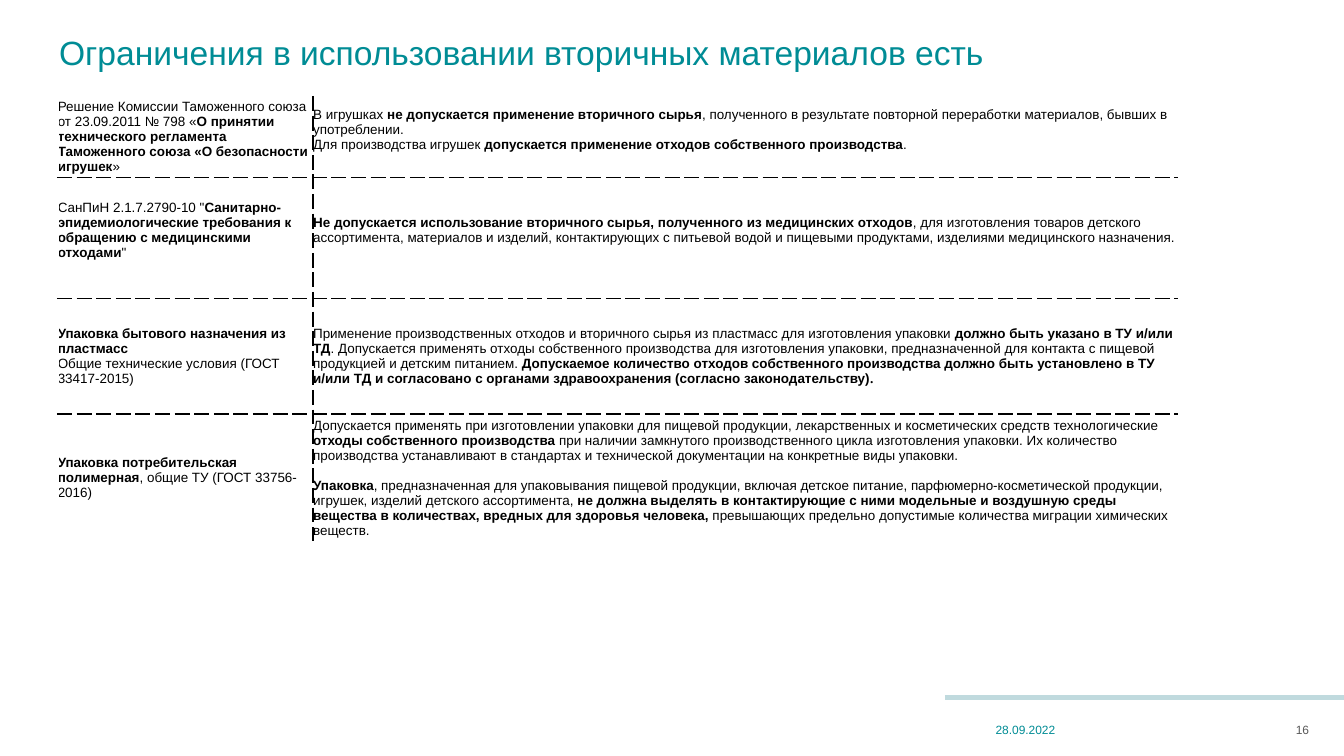
from dataclasses import dataclass

from lxml import etree
from pptx import Presentation
from pptx.dml.color import RGBColor
from pptx.enum.shapes import MSO_CONNECTOR
from pptx.enum.text import MSO_ANCHOR, PP_ALIGN
from pptx.oxml.ns import qn
from pptx.util import Inches, Pt

STRAIGHT = MSO_CONNECTOR.STRAIGHT
TOP, MIDDLE, BOTTOM = MSO_ANCHOR.TOP, MSO_ANCHOR.MIDDLE, MSO_ANCHOR.BOTTOM
LEFT, RIGHT = PP_ALIGN.LEFT, PP_ALIGN.RIGHT
GRID_COLS = 1000
UNIT = Inches(0.01)


@dataclass(frozen=True)
class Theme:
    font: str = "Arial"
    serif: str = "Times New Roman"
    teal: str = "008C95"
    gray: str = "595959"
    black: str = "000000"
    white: str = "FFFFFF"
    rule: str = "C0DADE"
    title: float = 18
    body: float = 7.2
    footer: float = 6.4
    rule_width: float = 2.75
    border_width: float = 1
    line_gap: float = 8.1


@dataclass(frozen=True)
class Box:
    col: int
    row: int
    cols: int
    rows: int

    def emu(self) -> tuple[int, int, int, int]:
        return self.col * UNIT, self.row * UNIT, self.cols * UNIT, self.rows * UNIT


@dataclass(frozen=True)
class Run:
    text: str
    bold: bool = False
    font: str = Theme.font


@dataclass(frozen=True)
class Para:
    runs: tuple[Run, ...]
    before: float = 0


@dataclass(frozen=True)
class Entry:
    paras: tuple[Para, ...]
    bottom: int = 0


T = Theme()


def para(markup: str, before: float = 0) -> Para:
    parts = enumerate(markup.split("**"))
    return Para(tuple(Run(t, i % 2 == 1) for i, t in parts if t), before)


def entry(*markups: str, bottom: int = 0) -> Entry:
    return Entry(tuple(para(m) for m in markups), bottom)


def write(tf, paras: tuple[Para, ...], *, size: float, color: str, align=LEFT) -> None:
    for i, item in enumerate(paras):
        p = tf.add_paragraph() if i else tf.paragraphs[0]
        p.alignment = align
        p.space_before = Pt(item.before)
        for run in item.runs:
            r = p.add_run()
            r.text = run.text
            r.font.name = run.font
            r.font.size = Pt(size)
            r.font.bold = run.bold
            r.font.color.rgb = RGBColor.from_string(color)
        etree.SubElement(p._p, qn("a:endParaRPr"), sz=str(round(size * 100)))


def add_text(s, box: Box, text: str, *, size: float, color: str, align=LEFT, anchor=TOP) -> None:
    tf = s.shapes.add_textbox(*box.emu()).text_frame
    tf.word_wrap = True
    tf.vertical_anchor = anchor
    tf.margin_left = tf.margin_top = tf.margin_right = tf.margin_bottom = 0
    write(tf, (para(text),), size=size, color=color, align=align)


def add_rule(s, col: int, row: int, end: int) -> None:
    line = s.shapes.add_connector(STRAIGHT, col * UNIT, row * UNIT, end * UNIT, row * UNIT)
    line.line.color.rgb = RGBColor.from_string(T.rule)
    line.line.width = Pt(T.rule_width)
    etree.SubElement(line._element.spPr, qn("a:effectLst"))


def add_border(cell, side: str, inner: bool) -> None:
    tc_pr = cell._tc.get_or_add_tcPr()
    ln = etree.SubElement(tc_pr, qn(f"a:ln{side}"), w=str(Pt(T.border_width)))
    fill = etree.SubElement(ln, qn("a:solidFill"))
    etree.SubElement(fill, qn("a:srgbClr"), val=T.black if inner else T.white)
    etree.SubElement(ln, qn("a:prstDash"), val="sysDash" if inner else "solid")


def add_rules_table(s, box: Box, widths: tuple, heights: tuple, entries: tuple) -> None:
    last_row, last_col = len(heights) - 1, len(widths) - 1
    table = s.shapes.add_table(len(heights), len(widths), *box.emu()).table
    table.first_row = table.horz_banding = False
    for column, width in zip(table.columns, widths):
        column.width = width * UNIT
    for row, height in zip(table.rows, heights):
        row.height = height * UNIT
    for y, row in enumerate(entries):
        for x, item in enumerate(row):
            cell = table.cell(y, x)
            inner = {"L": x > 0, "R": x < last_col, "T": y > 0, "B": y < last_row}
            for side, is_inner in inner.items():
                add_border(cell, side, is_inner)
            cell.fill.background()
            cell.vertical_anchor = MIDDLE
            cell.margin_left = cell.margin_top = cell.margin_right = 0
            cell.margin_bottom = item.bottom * UNIT
            write(cell.text_frame, item.paras, size=T.body, color=T.black)


PACKAGING = para(
    "Применение производственных отходов и вторичного сырья из пластмасс для изготовления упаковки"
    "** должно быть указано в ТУ и/или ТД**. Допускается применять отходы собственного производства "
    "для изготовления упаковки, предназначенной для контакта с пищевой продукцией и детским питанием."
    "** Допускаемое количество отходов собственного производства должно быть установлено в ТУ и/или ТД "
    "и согласовано с органами здравоохранения (согласно законодательству)**"
)

ENTRIES = (
    (
        entry("Решение Комиссии Таможенного союза от 23.09.2011 № 798 «**О принятии технического "
              "регламента Таможенного союза «О безопасности игрушек**»"),
        entry("В игрушках** не допускается применение вторичного сырья**, полученного в результате "
              "повторной переработки материалов, бывших в употреблении.",
              "Для производства игрушек** допускается применение отходов собственного производства**.",
              bottom=11),
    ),
    (
        entry('СанПиН 2.1.7.2790-10 "**Cанитарно-эпидемиологические требования к обращению с '
              'медицинскими отходами**"', bottom=11),
        entry("**Не допускается использование вторичного сырья, полученного из медицинских отходов**, "
              "для изготовления товаров детского ассортимента, материалов и изделий, контактирующих с "
              "питьевой водой и пищевыми продуктами, изделиями медицинского назначения.", bottom=11),
    ),
    (
        entry("**Упаковка бытового назначения из пластмасс**",
              "Общие технические условия (ГОСТ 33417-2015)"),
        Entry((Para(PACKAGING.runs + (Run(".", True, T.serif),)),)),
    ),
    (
        entry("**Упаковка потребительская полимерная**, общие ТУ (ГОСТ 33756-2016)"),
        Entry((
            para("Допускается применять при изготовлении упаковки для пищевой продукции, лекарственных "
                 "и косметических средств технологические** отходы собственного производства** при "
                 "наличии замкнутого производственного цикла изготовления упаковки. Их количество "
                 "производства устанавливают в стандартах и технической документации на конкретные "
                 "виды упаковки."),
            para("**Упаковка**, предназначенная для упаковывания пищевой продукции, включая детское "
                 "питание, парфюмерно-косметической продукции, игрушек, изделий детского ассортимента, "
                 "**не должна выделять в контактирующие с ними модельные и воздушную среды вещества в "
                 "количествах, вредных для здоровья человека,** превышающих предельно допустимые "
                 "количества миграции химических веществ.", T.line_gap),
        )),
    ),
)


def main() -> None:
    prs = Presentation()
    prs.slide_width = GRID_COLS * UNIT
    prs.slide_height = prs.slide_width * 9 // 16
    s = prs.slides.add_slide(prs.slide_layouts[6])
    add_rule(s, 703, 519, GRID_COLS)
    add_text(s, Box(44, 24, 928, 52), "Ограничения в использовании вторичных материалов есть",
             size=T.title, color=T.teal)
    add_text(s, Box(942, 529, 32, 19), "16", size=T.footer, color=T.gray, align=RIGHT, anchor=BOTTOM)
    add_rules_table(s, Box(43, 72, 833, 318), (190, 643), (56, 90, 86, 86), ENTRIES)
    add_text(s, Box(683, 530, 102, 18), "28.09.2022", size=T.footer, color=T.teal,
             align=RIGHT, anchor=BOTTOM)
    prs.save("out.pptx")


if __name__ == "__main__":
    main()
